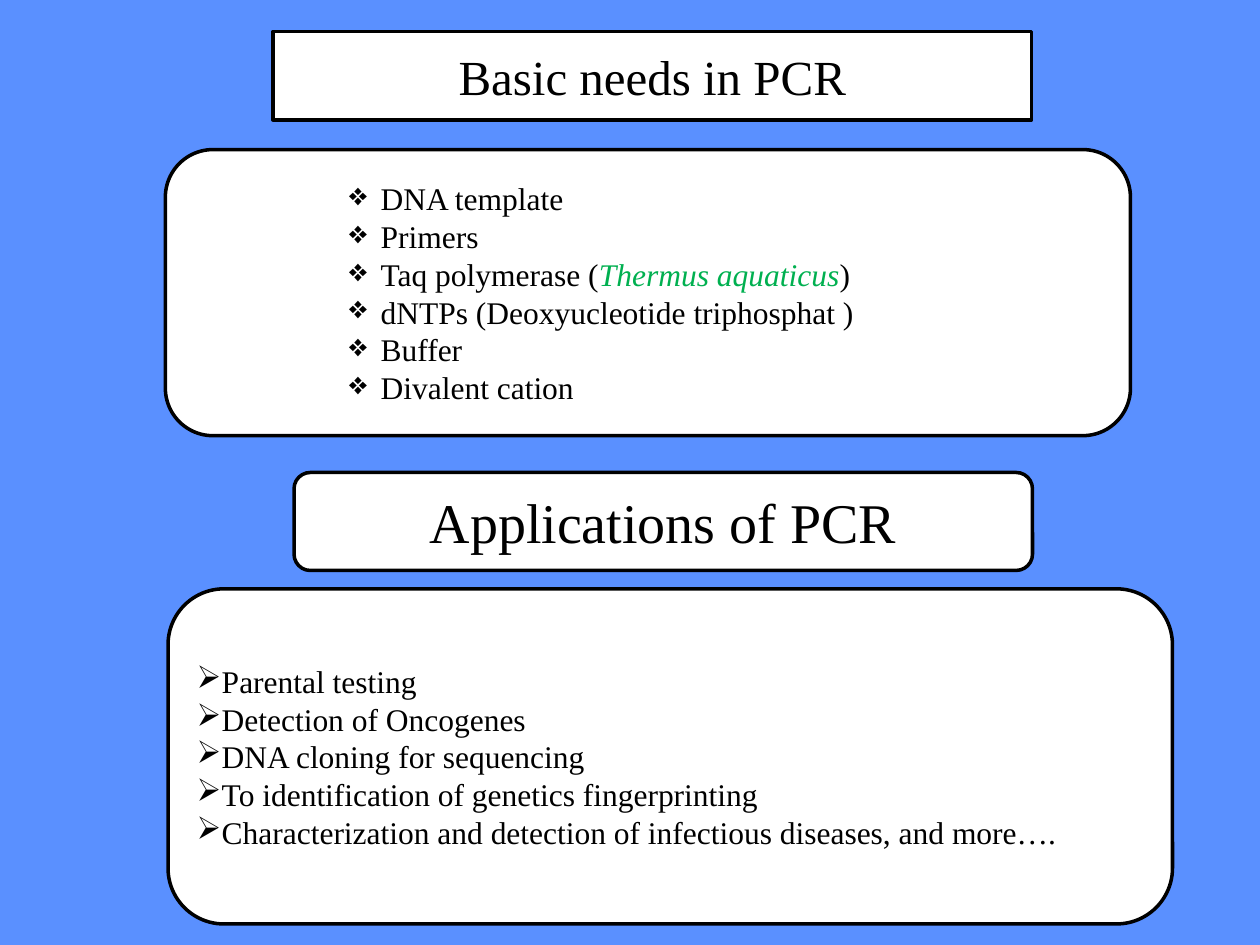
"""Build a slide listing the basic needs and the applications of PCR."""
from lxml.etree import SubElement
from pptx import Presentation
from pptx.dml.color import RGBColor
from pptx.enum.shapes import MSO_SHAPE
from pptx.enum.text import MSO_ANCHOR, MSO_AUTO_SIZE, PP_ALIGN
from pptx.oxml.ns import qn
from pptx.util import Pt

COLORS = {"back": "5A90FF", "box": "FFFFFF", "ink": "000000", "species": "00B050"}
FONT = "Times New Roman"
NEEDS = [
    ["DNA template"],
    ["Primers"],
    ["Taq polymerase (", "*Thermus aquaticus", ")"],
    ["dNTPs (Deoxyucleotide triphosphat )"],
    ["Buffer"],
    ["Divalent cation"],
]
APPLICATIONS = [
    ["Parental testing"],
    ["Detection of Oncogenes"],
    ["DNA cloning for sequencing"],
    ["To identification of genetics fingerprinting"],
    ["Characterization and detection of infectious diseases, and more…."],
]


class Deck:
    def __init__(self):
        self.prs = Presentation()
        self.prs.slide_width, self.prs.slide_height = Pt(720), Pt(540)
        self.slide = self.prs.slides.add_slide(self.prs.slide_layouts[5])
        fill = self.slide.background.fill
        fill.solid()
        fill.fore_color.rgb = self.color("back")

    def color(self, name):
        return RGBColor.from_string(COLORS[name])

    def style(self, sp):
        sp.fill.solid()
        sp.fill.fore_color.rgb = self.color("box")
        sp.line.color.rgb = self.color("ink")
        sp.line.width = Pt(2)
        sp.shadow.inherit = False
        tf = sp.text_frame
        tf.word_wrap = True
        tf.auto_size = MSO_AUTO_SIZE.NONE
        tf.vertical_anchor = MSO_ANCHOR.MIDDLE
        return tf

    def box(self, *at):
        sp = self.slide.shapes.add_shape(MSO_SHAPE.ROUNDED_RECTANGLE, *map(Pt, at))
        return self.style(sp)

    def run(self, p, text, size, color="ink", italic=False):
        r = p.add_run()
        r.text = text
        r.font.name, r.font.size, r.font.italic = FONT, Pt(size), italic
        r.font.color.rgb = self.color(color)

    def heading(self, tf, text, size):
        p = tf.paragraphs[0]
        p.alignment = PP_ALIGN.CENTER
        self.run(p, text, size)

    def title(self, text, size, *at):
        sp = self.slide.shapes.title
        sp.left, sp.top, sp.width, sp.height = map(Pt, at)
        geom = SubElement(sp.element.spPr, qn("a:prstGeom"), prst="roundRect")
        SubElement(geom, qn("a:avLst"))
        self.heading(self.style(sp), text, size)

    def bullets(self, tf, items, char, align, level=0, margin=0, indent=0):
        for i, parts in enumerate(items):
            p = tf.add_paragraph() if i else tf.paragraphs[0]
            p.alignment, p.level = align, level
            pPr = p._p.get_or_add_pPr()
            pPr.set("marL", str(Pt(margin)))
            pPr.set("indent", str(Pt(indent)))
            SubElement(pPr, qn("a:buChar"), char=char)
            for part in parts:
                if part.startswith("*"):
                    self.run(p, part[1:], 18, "species", True)
                else:
                    self.run(p, part, 18)


def main():
    deck = Deck()
    deck.title("Basic needs in PCR", 28, 156, 18, 433.5, 50.5)
    deck.bullets(deck.box(94.5, 85.5, 551.5, 163.5), NEEDS, "❖",
                 PP_ALIGN.LEFT, level=3, margin=108, indent=-18)
    deck.heading(deck.box(168, 270, 422, 56), "Applications of PCR", 32)
    deck.bullets(deck.box(96, 336.5, 574, 191.5), APPLICATIONS, "➢",
                 PP_ALIGN.JUSTIFY)
    deck.prs.save("out.pptx")


if __name__ == "__main__":
    main()
